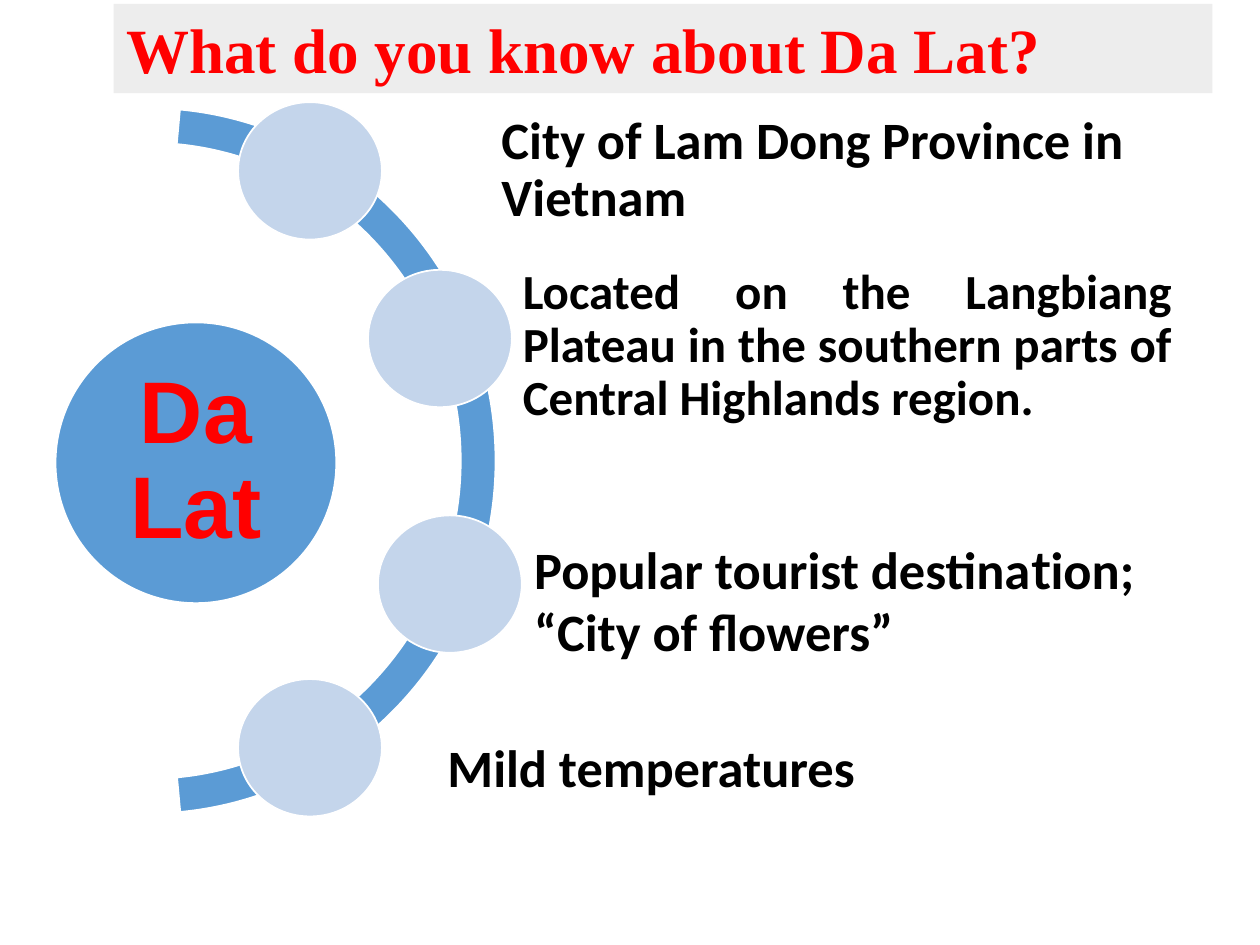
"""Build the Da Lat overview slide: a hub, an arc and four facts."""
from dataclasses import dataclass

import pptx
import pptx.dml.color
import pptx.enum.shapes
import pptx.enum.text
import pptx.util

Cm = pptx.util.Cm
Pt = pptx.util.Pt
Shapes = pptx.enum.shapes.MSO_SHAPE
Align = pptx.enum.text.PP_ALIGN
Anchor = pptx.enum.text.MSO_ANCHOR

BLUE, PALE_BLUE, GREY = "5B9BD5", "C4D5EB", "EDEDED"
WHITE, BLACK, RED = "FFFFFF", "000000", "FF0000"


@dataclass(frozen=True)
class Box:
    left: float
    top: float
    width: float
    height: float

    def lengths(self) -> list:
        return [Cm(value) for value in (self.left, self.top, self.width, self.height)]


@dataclass(frozen=True)
class Fact:
    lines: list
    box: Box
    dot_left: float
    dot_top: float
    size: int = 30
    align: Align = Align.LEFT


FACTS = [
    Fact([["City of Lam Dong Province in Vietnam"]], Box(10.01, 1.7, 13.21, 3.51), 4.8, 2.06),
    Fact([["Located on the Langbiang Plateau in the southern parts of Central Highlands region."]],
         Box(10.44, 5.36, 13.28, 3.25), 7.42, 5.44, size=28, align=Align.JUSTIFY),
    Fact([["Popular tourist destina", ("t", "Lato"), "ion;"], ["“City of flowers”"]],
         Box(10.67, 10.41, 13.69, 3.51), 7.62, 10.39),
    Fact([["Mild temperatures"]], Box(8.92, 13.77, 12.88, 3.51), 4.8, 13.69),
]


def rgb(value: str) -> pptx.dml.color.RGBColor:
    return pptx.dml.color.RGBColor.from_string(value)


def write(frame, lines: list, *, size: int, font: str = "Calibri", color: str = BLACK,
          align: Align = Align.LEFT, anchor: Anchor = Anchor.MIDDLE,
          insets: tuple = (0.1, 0.1), spacing: float = 0.9, after: float = 0) -> None:
    """Write lines of runs, each run being a string or a (string, font) pair."""
    frame.word_wrap = True
    frame.auto_size = pptx.enum.text.MSO_AUTO_SIZE.NONE
    frame.vertical_anchor = anchor
    frame.margin_left = frame.margin_right = Cm(insets[0])
    frame.margin_top = frame.margin_bottom = Cm(insets[1])
    for index, line in enumerate(lines):
        paragraph = frame.add_paragraph() if index else frame.paragraphs[0]
        paragraph.alignment = align
        paragraph.line_spacing = spacing
        paragraph.space_after = Pt(after)
        for part in line:
            words, typeface = part if isinstance(part, tuple) else (part, font)
            run = paragraph.add_run()
            run.text = words
            run.font.name = typeface
            run.font.size = Pt(size)
            run.font.bold = True
            run.font.color.rgb = rgb(color)


def draw(slide, kind: Shapes, box: Box, fill: str):
    """Add a filled shape with a thin white outline."""
    shape = slide.shapes.add_shape(kind, *box.lengths())
    shape.shadow.inherit = False
    shape.fill.solid()
    shape.fill.fore_color.rgb = rgb(fill)
    shape.line.color.rgb = rgb(WHITE)
    shape.line.width = Pt(1)
    return shape


def draw_fact(slide, fact: Fact) -> None:
    draw(slide, Shapes.OVAL, Box(fact.dot_left, fact.dot_top, 2.9, 2.77), PALE_BLUE)
    label = slide.shapes.add_textbox(*fact.box.lengths())
    write(label.text_frame, fact.lines, size=fact.size, align=fact.align, after=3)


def main() -> None:
    deck = pptx.Presentation()
    deck.slide_width, deck.slide_height = Cm(25.4), Cm(19.05)
    slide = deck.slides.add_slide(deck.slide_layouts[5])

    title = slide.shapes.title
    title.left, title.top, title.width, title.height = Box(2.29, 0.08, 22.15, 1.8).lengths()
    title.fill.solid()
    title.fill.fore_color.rgb = rgb(GREY)
    write(title.text_frame, [["What do you know about Da Lat?"]], size=36,
          font="Times New Roman", color=RED, anchor=Anchor.TOP,
          insets=(0.25, 0.13), spacing=1.0)

    hub = draw(slide, Shapes.OVAL, Box(1.12, 6.5, 5.66, 5.66), BLUE)
    write(hub.text_frame, [["Da Lat"]], size=50, font="Arial", color=RED,
          align=Align.CENTER, insets=(0.16, 0.18), after=17.5)

    arc = draw(slide, Shapes.BLOCK_ARC, Box(-4.01, 2.18, 14, 14.22), BLUE)
    for index, value in enumerate((165.09, 50.88, 0.05)):
        arc.adjustments[index] = value

    for fact in FACTS:
        draw_fact(slide, fact)

    deck.save("out.pptx")


if __name__ == "__main__":
    main()
